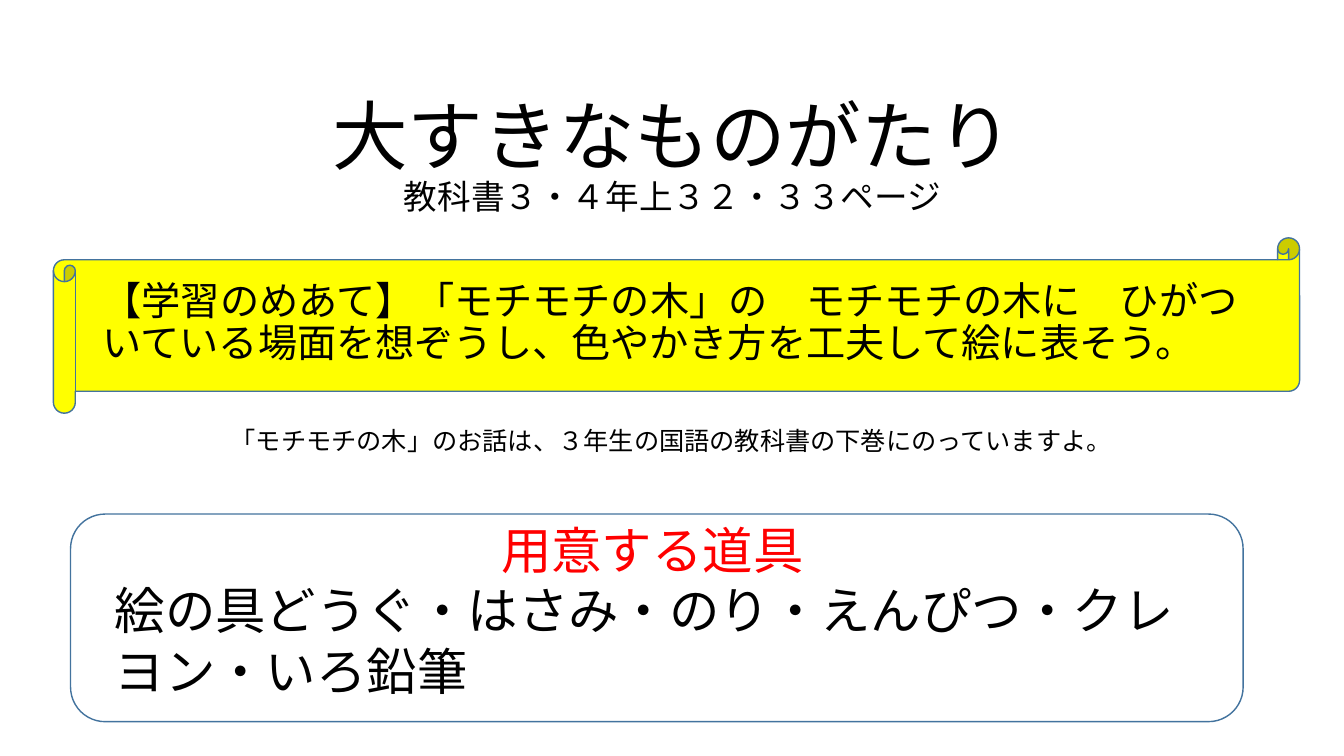
from lxml.etree import SubElement
from pptx import Presentation
from pptx.dml.color import RGBColor
from pptx.enum.lang import MSO_LANGUAGE_ID
from pptx.enum.shapes import MSO_SHAPE
from pptx.enum.text import MSO_ANCHOR, PP_ALIGN
from pptx.oxml.ns import qn
from pptx.util import Inches, Pt

FONT = "Noto Sans CJK JP"
COLORS = {"text": "000000", "heading": "FF0000", "scroll": "FFFF00", "outline": "43739E"}


def add_outline(page, kind, place, fill=None):
    """Add an outlined preset shape, filled only if a colour is named."""
    shape = page.shapes.add_shape(kind, *map(Inches, place))
    shape.shadow.inherit = False
    if fill:
        shape.fill.solid()
        shape.fill.fore_color.rgb = RGBColor.from_string(COLORS[fill])
    else:
        shape.fill.background()
    shape.line.color.rgb = RGBColor.from_string(COLORS["outline"])
    shape.line.width = Pt(1)


def add_box(page, place, **frame_format):
    box = page.shapes.add_textbox(*map(Inches, place)).text_frame
    for name, value in {"word_wrap": True, **frame_format}.items():
        setattr(box, name, value)
    return box


def add_span(para, text, size, color="text"):
    span = para.add_run()
    span.text = text
    font_format = {"size": Pt(size), "name": FONT, "language_id": MSO_LANGUAGE_ID.JAPANESE}
    for name, value in font_format.items():
        setattr(span.font, name, value)
    span.font.color.rgb = RGBColor.from_string(COLORS[color])
    # Japanese glyphs take the East Asian typeface
    SubElement(span.font._element, qn("a:ea"), typeface=FONT)


def main():
    deck = Presentation()
    deck.slide_width, deck.slide_height = Inches(13.33), Inches(7.5)
    page = deck.slides.add_slide(deck.slide_layouts[6])

    # Scroll behind the learning goal
    add_outline(page, MSO_SHAPE.HORIZONTAL_SCROLL, (0.53, 2.36, 12.36, 1.74), "scroll")

    # Title and textbook pages
    title = add_box(page, (0.92, 0.4, 11.5, 2.34), vertical_anchor=MSO_ANCHOR.MIDDLE).paragraphs[0]
    title.alignment = PP_ALIGN.CENTER
    title.line_spacing = 0.9
    add_span(title, "大すきなものがたり", 54)
    title.add_line_break()
    add_span(title, "教科書３・４年上３２・３３ページ", 24)

    # Learning goal
    goal = add_box(page, (0.92, 2.74, 11.5, 1)).paragraphs[0]
    goal.line_spacing = 0.9
    add_span(goal, "【学習のめあて】「モチモチの木」の　モチモチの木に　ひがついている場面を想ぞうし、"
                   "色やかき方を工夫して絵に表そう。", 28)

    # Tools to prepare
    tools = add_box(page, (1.04, 5.1, 10.86, 1.92))
    heading = tools.paragraphs[0]
    heading.alignment = PP_ALIGN.CENTER
    add_span(heading, "用意する道具", 36, "heading")
    add_span(tools.add_paragraph(), "絵の具どうぐ・はさみ・のり・えんぴつ・クレヨン・いろ鉛筆", 36)

    # Note on the story
    note = add_box(page, (2.19, 4.17, 9.04, 0.4), word_wrap=False).paragraphs[0]
    add_span(note, "「モチモチの木」のお話は、３年生の国語の教科書の下巻にのっていますよ。", 18)

    # Frame around the tools
    add_outline(page, MSO_SHAPE.ROUNDED_RECTANGLE, (0.7, 5.1, 11.63, 2.06))

    deck.save("out.pptx")


if __name__ == "__main__":
    main()
